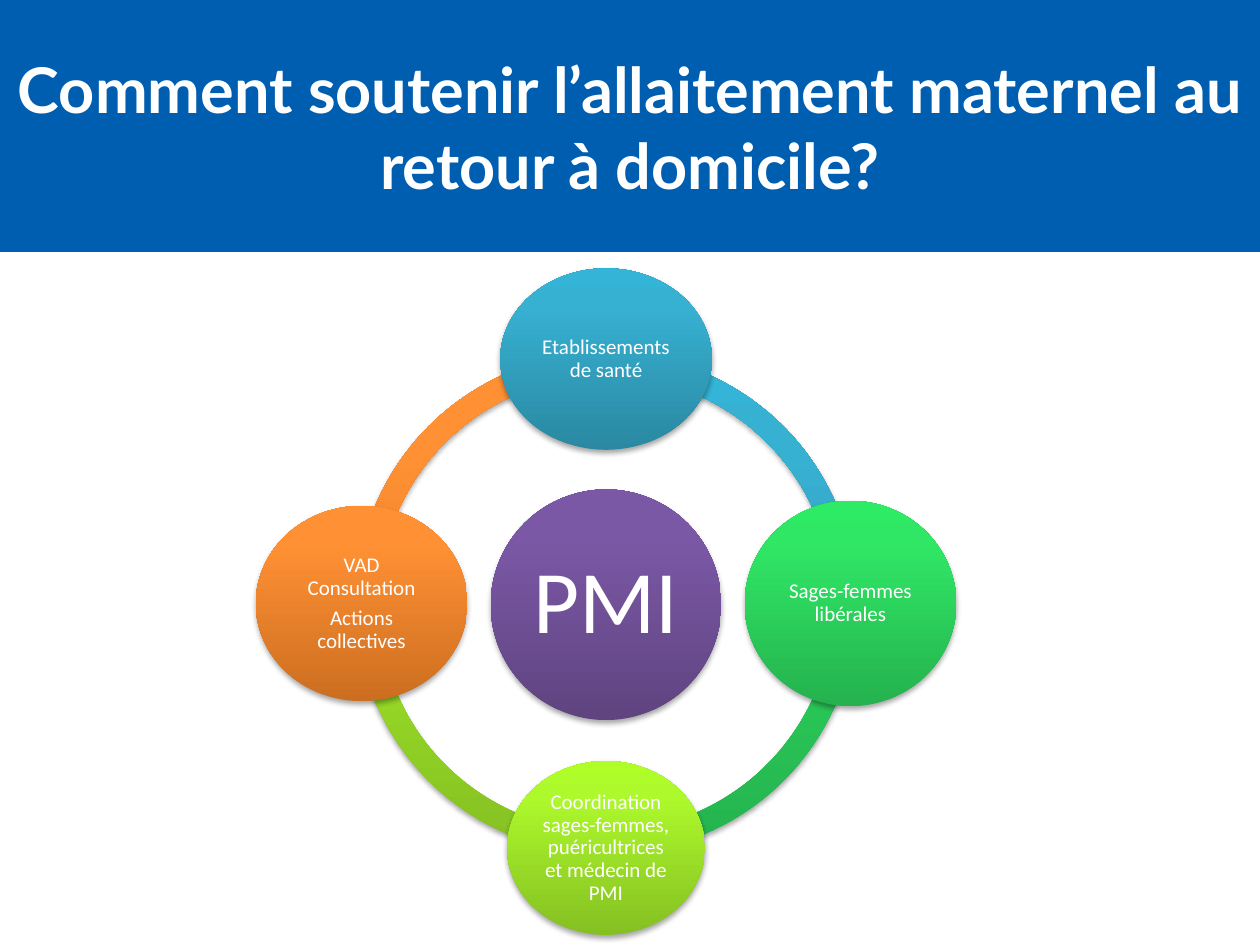
from copy import deepcopy
from dataclasses import dataclass
from math import cos, radians, sin

from pptx import Presentation
from pptx.dml.color import RGBColor
from pptx.enum.shapes import MSO_SHAPE as Shape
from pptx.enum.text import MSO_ANCHOR as Anchor, PP_ALIGN as Align
from pptx.oxml import parse_xml
from pptx.oxml.ns import nsdecls, qn
from pptx.util import Inches, Pt


@dataclass(frozen=True)
class Theme:
    banner: str = "005EB0"
    text: str = "FFFFFF"
    # Gradients run from the bottom up
    blue: tuple = ("2A88A2", "37B1D2", "34B4D6")
    green: tuple = ("25B24E", "30E765", "2DEB64")
    lime: tuple = ("85C022", "ADF92C", "AFFE28")
    orange: tuple = ("CC6E20", "FF9034", "FF9136")
    purple: tuple = ("5F4480", "7B58A6", "7C57A8")
    stops: tuple = (0, 0.8, 1)
    title_font: str = "Lato"
    body_font: str = "Calibri"
    title_size: int = 36
    hub_size: int = 51
    node_size: int = 12


SHADOW = (
    f'<a:outerShdw {nsdecls("a")} blurRad="40000" dist="23000" dir="5400000" rotWithShape="0">'
    '<a:srgbClr val="000000"><a:alpha val="35000"/></a:srgbClr></a:outerShdw>'
)


class SlideBuilder:
    def __init__(self, slide, theme):
        self.slide = slide
        self.theme = theme
        self.group = slide.shapes.add_group_shape()

    def title(self, text, x, y, w, h):
        t = self.theme
        sp = self.slide.shapes.title
        sp.left, sp.top, sp.width, sp.height = map(Inches, (x, y, w, h))
        sp.fill.solid()
        sp.fill.fore_color.rgb = RGBColor.from_string(t.banner)
        tf = sp.text_frame
        tf.text = text
        tf.vertical_anchor = Anchor.MIDDLE
        p = tf.paragraphs[0]
        p.alignment = Align.CENTER
        self.font(p, t.title_font, t.title_size, bold=True)

    def font(self, p, name, size, bold=False):
        p.font.name, p.font.size, p.font.bold = name, Pt(size), bold
        p.font.color.rgb = RGBColor.from_string(self.theme.text)

    def shaded(self, kind, cx, cy, w, h, colors):
        """Add a shape centred on (cx, cy) with a gradient and a soft shadow."""
        box = map(Inches, (cx - w / 2, cy - h / 2, w, h))
        sp = self.group.shapes.add_shape(kind, *box)
        sp.line.fill.background()
        fill = sp.fill
        fill.gradient()
        fill.gradient_angle = 90
        stop_list = sp._element.spPr.find(qn("a:gradFill")).find(qn("a:gsLst"))
        stop_list.append(deepcopy(stop_list[0]))
        for stop, position, color in zip(fill.gradient_stops, self.theme.stops, colors):
            stop.position = position
            stop.color.rgb = RGBColor.from_string(color)
        sp.shadow.inherit = False
        sp._element.spPr.find(qn("a:effectLst")).append(parse_xml(SHADOW))
        return sp

    def arc(self, cx, cy, diameter, start, colors):
        """Add a quarter of the ring, clockwise from the start angle."""
        sp = self.shaded(Shape.BLOCK_ARC, cx, cy, diameter, diameter, colors)
        # Angles are stored in 60000ths of a degree, adjustments in 100000ths
        sp.adjustments[0] = start * 0.6
        sp.adjustments[1] = (start + 90) % 360 * 0.6
        sp.adjustments[2] = 0.046

    def circle(self, lines, cx, cy, w, h, colors, size, inset):
        sp = self.shaded(Shape.OVAL, cx, cy, w, h, colors)
        tf = sp.text_frame
        tf.word_wrap = True
        tf.vertical_anchor = Anchor.MIDDLE
        tf.margin_left = tf.margin_right = Inches(inset)
        tf.margin_top = tf.margin_bottom = Inches(inset)
        tf.text = "\n".join(lines)
        for p in tf.paragraphs:
            p.alignment = Align.CENTER
            p.line_spacing = 0.9
            p.space_after = Pt(size * 0.35)
            self.font(p, self.theme.body_font, size)


def main():
    prs = Presentation()
    prs.slide_width, prs.slide_height = Inches(10), Inches(7.5)
    theme = Theme()
    s = SlideBuilder(prs.slides.add_slide(prs.slide_layouts[5]), theme)

    # Banner
    s.title("Comment soutenir l’allaitement maternel au retour à domicile?", 0, 0, 10, 2)

    # Nodes clockwise from the top: angle, lines, width, height, colours
    nodes = [
        (270, ["Etablissements de santé"], 1.68, 1.44, theme.blue),
        (0, ["Sages-femmes libérales"], 1.68, 1.63, theme.green),
        (90, ["Coordination sages-femmes, puéricultrices et médecin de PMI"],
         1.57, 1.38, theme.lime),
        (180, ["VAD Consultation", "Actions collectives"], 1.68, 1.55, theme.orange),
    ]
    cx, cy, radius = 4.81, 4.79, 1.94

    # Ring behind the circles
    for angle, _, _, _, colors in reversed(nodes):
        s.arc(cx, cy, 3.98, angle, colors)

    # Hub and surrounding circles
    s.circle(["PMI"], cx, cy + 0.01, 1.83, 1.83, theme.purple, theme.hub_size, 0.07)
    for angle, lines, w, h, colors in nodes:
        x = cx + radius * cos(radians(angle))
        y = cy + radius * sin(radians(angle))
        s.circle(lines, x, y, w, h, colors, theme.node_size, 0.02)

    prs.save("out.pptx")


if __name__ == "__main__":
    main()
